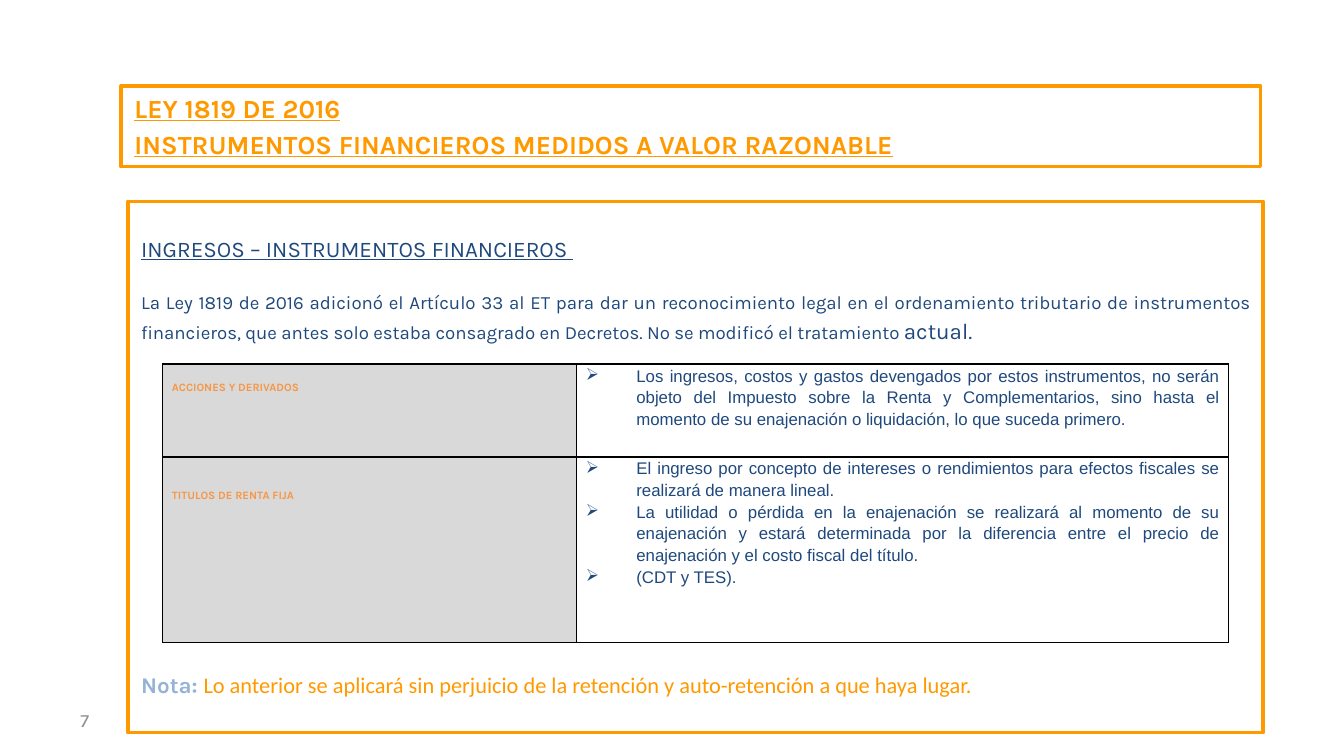
from lxml import etree
from pptx import Presentation
from pptx.dml.color import RGBColor
from pptx.enum.text import MSO_ANCHOR, MSO_AUTO_SIZE, PP_ALIGN
from pptx.oxml.ns import qn
from pptx.util import Pt

LEFT, JUSTIFY = PP_ALIGN.LEFT, PP_ALIGN.JUSTIFY
TOP, MIDDLE = MSO_ANCHOR.TOP, MSO_ANCHOR.MIDDLE
NO_FIT = MSO_AUTO_SIZE.NONE

COLORS = {
    "white": "FFFFFF", "orange": "FF9900", "navy": "1F497D", "sky": "95B3D7",
    "label": "F79646", "gray": "D9D9D9", "number": "8C8C8C", "black": "000000",
}
TITLE = ["LEY 1819 DE 2016", "INSTRUMENTOS FINANCIEROS MEDIDOS A VALOR RAZONABLE"]
LAW = (
    "La Ley 1819 de 2016 adicionó el Artículo 33 al ET para dar un reconocimiento legal "
    "en el ordenamiento tributario de instrumentos financieros, que antes solo estaba "
    "consagrado en Decretos. No se modificó el tratamiento "
)
NOTE = "Lo anterior se aplicará sin perjuicio de la retención y auto-retención a que haya lugar."
ROWS = [
    ("ACCIONES Y DERIVADOS", 8, 49.68, [
        "Los ingresos, costos y gastos devengados por estos instrumentos, no serán objeto "
        "del Impuesto sobre la Renta y Complementarios, sino hasta el momento de su "
        "enajenación o liquidación, lo que suceda primero.",
    ]),
    ("TITULOS DE RENTA FIJA", 16, 99.36, [
        "El ingreso por concepto de intereses o rendimientos para efectos fiscales se "
        "realizará de manera lineal.",
        "La utilidad o pérdida en la enajenación se realizará al momento de su enajenación "
        "y estará determinada por la diferencia entre el precio de enajenación y el costo "
        "fiscal del título.",
        "(CDT y TES).",
    ]),
]
COLUMN_WIDTHS = [221.76, 349.2]


def color(name):
    """Return the named colour."""
    return RGBColor.from_string(COLORS[name])


def add_span(para, text, size, tint, name="Karla", **formats):
    """Add a formatted run to a paragraph."""
    span = para.add_run()
    span.text = text
    span.font.color.rgb = color(tint)
    for key, value in dict(formats, size=Pt(size), name=name).items():
        setattr(span.font, key, value)


def add_para(frame, first=False, bullet=None, indent=0, **formats):
    """Return a formatted paragraph, the existing one when it is the first."""
    para = frame.paragraphs[0] if first else frame.add_paragraph()
    values = {"alignment": LEFT, "line_spacing": 1.0, "space_before": Pt(0), "space_after": Pt(0)}
    for key, value in {**values, **formats}.items():
        setattr(para, key, value)
    props = para._p.get_or_add_pPr()
    props.set("marL", str(Pt(indent)))
    props.set("indent", str(Pt(-indent)))
    if bullet:
        etree.SubElement(props, qn("a:buChar"), char=bullet)
    else:
        etree.SubElement(props, qn("a:buNone"))
    return para


def place_box(box, left, top, width, height, **formats):
    """Position a text holder and return its formatted frame."""
    places = {"left": left, "top": top, "width": width, "height": height}
    for key, value in places.items():
        setattr(box, key, Pt(value))
    values = {"word_wrap": True, "auto_size": NO_FIT, "vertical_anchor": TOP}
    for key, value in {**values, **formats}.items():
        setattr(box.text_frame, key, value)
    return box.text_frame


def frame_box(box):
    """Give a box a white fill and an orange outline."""
    box.fill.solid()
    box.fill.fore_color.rgb = color("white")
    box.line.color.rgb = color("orange")
    box.line.width = Pt(2)


def fill_title(box):
    """Write the framed title."""
    frame_box(box)
    frame = place_box(box, 64.8, 46.08, 610.56, 43.2)
    for index, text in enumerate(TITLE):
        para = add_para(frame, index == 0, space_after=Pt(2))
        add_span(para, text, 14, "orange", bold=True, underline=True)


def fill_body(box):
    """Write the heading, the law and the note around the table."""
    frame_box(box)
    frame = place_box(box, 68.4, 108, 608.4, 284.4, margin_top=Pt(18))
    heading = add_para(frame, True)
    add_span(heading, "INGRESOS – INSTRUMENTOS FINANCIEROS ", 12, "navy", underline=True)
    law = add_para(frame, alignment=JUSTIFY, line_spacing=1.15, space_before=Pt(13.5))
    add_span(law, LAW, 10, "navy")
    add_span(law, "actual.", 12, "navy")
    note = add_para(frame, space_before=Pt(175.5))
    add_span(note, "Nota: ", 12, "sky", bold=True)
    add_span(note, NOTE, 12, "orange", "Calibri")


def format_cell(cell, fill=None, top=0):
    """Set the borders, margins and fill of a cell."""
    props = cell._tc.get_or_add_tcPr()
    for side in ("lnL", "lnR", "lnT", "lnB"):
        line = etree.SubElement(props, qn(f"a:{side}"), w=str(Pt(1)))
        solid = etree.SubElement(line, qn("a:solidFill"))
        etree.SubElement(solid, qn("a:srgbClr"), val=COLORS["black"])
    margins = {"left": 5.04, "right": 5.04, "top": top, "bottom": 0}
    for side, value in margins.items():
        setattr(cell, f"margin_{side}", Pt(value))
    if fill:
        cell.fill.solid()
        cell.fill.fore_color.rgb = color(fill)
    else:
        cell.fill.background()


def add_instruments(page):
    """Add the table of instruments and their treatment."""
    width, height = sum(COLUMN_WIDTHS), sum(row[2] for row in ROWS)
    holder = page.shapes.add_table(
        len(ROWS), len(COLUMN_WIDTHS), Pt(87.12), Pt(195.12), Pt(width), Pt(height))
    table = holder.table
    table.first_row = table.horz_banding = False
    for column, size in zip(table.columns, COLUMN_WIDTHS):
        column.width = Pt(size)
    for index, (label, top, row_height, points) in enumerate(ROWS):
        table.rows[index].height = Pt(row_height)
        name_cell, text_cell = table.cell(index, 0), table.cell(index, 1)
        format_cell(name_cell, "gray", top)
        format_cell(text_cell)
        para = add_para(name_cell.text_frame, True, line_spacing=1.15)
        add_span(para, label, 6, "label", bold=True)
        for order, text in enumerate(points):
            para = add_para(text_cell.text_frame, order == 0, "➢", 27,
                            alignment=JUSTIFY, line_spacing=1.15)
            add_span(para, text, 9, "navy", "Arial")


def add_number(page):
    """Add the page number."""
    box = page.shapes.add_textbox(0, 0, 0, 0)
    frame = place_box(box, 36, 375.12, 167.76, 21.6, vertical_anchor=MIDDLE)
    add_span(add_para(frame, True), "7", 10, "number")


def main():
    """Build and save the slide."""
    deck = Presentation()
    deck.slide_width, deck.slide_height = Pt(720), Pt(405)
    page = deck.slides.add_slide(deck.slide_layouts[1])
    add_number(page)
    fill_title(page.shapes.title)
    fill_body(page.placeholders[1])
    add_instruments(page)
    deck.save("out.pptx")


if __name__ == "__main__":
    main()
